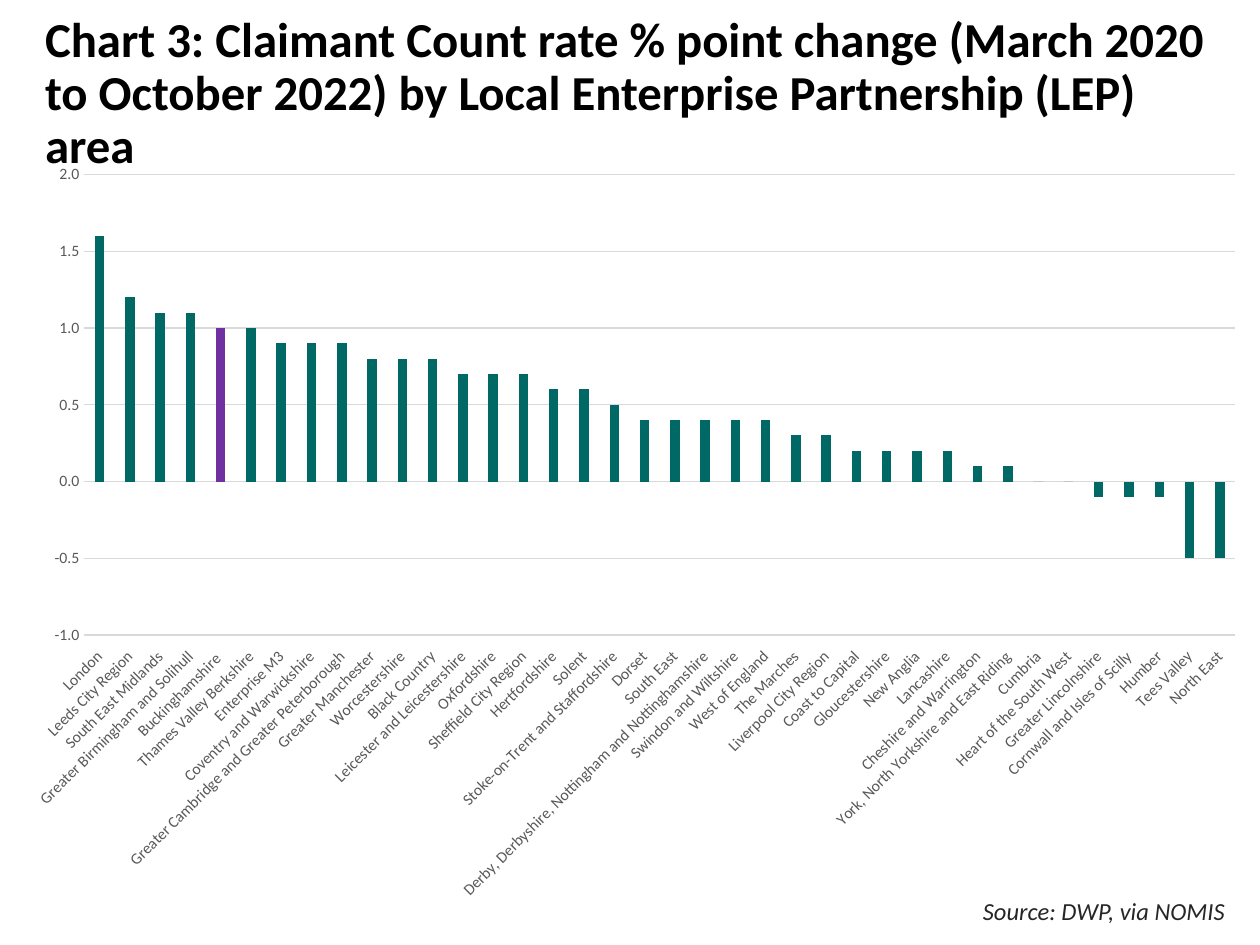
"""Build the Claimant Count slide with its column chart by LEP area."""
from dataclasses import dataclass, field

from pptx import Presentation
from pptx.chart.axis import _BaseAxis
from pptx.chart.data import CategoryChartData
from pptx.dml.color import RGBColor
from pptx.enum.chart import XL_CHART_TYPE, XL_TICK_LABEL_POSITION, XL_TICK_MARK
from pptx.enum.text import MSO_ANCHOR, PP_ALIGN
from pptx.slide import Slide
from pptx.text.text import Font
from pptx.util import Inches, Pt

COLUMNS = XL_CHART_TYPE.COLUMN_CLUSTERED
LOW = XL_TICK_LABEL_POSITION.LOW
NO_TICK = XL_TICK_MARK.NONE
TOP, MIDDLE = MSO_ANCHOR.TOP, MSO_ANCHOR.MIDDLE
LEFT, RIGHT = PP_ALIGN.LEFT, PP_ALIGN.RIGHT

BLACK = RGBColor(0x00, 0x00, 0x00)
CHARCOAL = RGBColor(0x26, 0x26, 0x26)
GREY = RGBColor(0x59, 0x59, 0x59)
PALE_GREY = RGBColor(0xD9, 0xD9, 0xD9)
TEAL = RGBColor(0x00, 0x69, 0x65)
PURPLE = RGBColor(0x70, 0x30, 0xA0)

FONT_NAME = "Calibri"
SLIDE_WIDTH, SLIDE_HEIGHT = Inches(10), Inches(7.5)
HIGHLIGHT = "Buckinghamshire "

RATE_CHANGES: dict[str, float] = {
    "London": 1.6,
    "Leeds City Region": 1.2,
    "South East Midlands": 1.1,
    "Greater Birmingham and Solihull": 1.1,
    HIGHLIGHT: 1.0,
    "Thames Valley Berkshire": 1.0,
    "Enterprise M3": 0.9,
    "Coventry and Warwickshire": 0.9,
    "Greater Cambridge and Greater Peterborough": 0.9,
    "Greater Manchester": 0.8,
    "Worcestershire": 0.8,
    "Black Country": 0.8,
    "Leicester and Leicestershire": 0.7,
    "Oxfordshire": 0.7,
    "Sheffield City Region": 0.7,
    "Hertfordshire": 0.6,
    "Solent": 0.6,
    "Stoke-on-Trent and Staffordshire": 0.5,
    "Dorset": 0.4,
    "South East": 0.4,
    "Derby, Derbyshire, Nottingham and Nottinghamshire": 0.4,
    "Swindon and Wiltshire": 0.4,
    "West of England": 0.4,
    "The Marches": 0.3,
    "Liverpool City Region": 0.3,
    "Coast to Capital": 0.2,
    "Gloucestershire": 0.2,
    "New Anglia": 0.2,
    "Lancashire": 0.2,
    "Cheshire and Warrington": 0.1,
    "York, North Yorkshire and East Riding": 0.1,
    "Cumbria": 0.0,
    "Heart of the South West": 0.0,
    "Greater Lincolnshire": -0.1,
    "Cornwall and Isles of Scilly": -0.1,
    "Humber": -0.1,
    "Tees Valley": -0.5,
    "North East": -0.5,
}


@dataclass(frozen=True)
class Area:
    """A rectangle given as percentages of the slide's width and height."""

    left: float
    top: float
    width: float
    height: float

    def lengths(self) -> tuple[int, int, int, int]:
        """Return the rectangle in slide units."""
        return (
            int(SLIDE_WIDTH * self.left / 100),
            int(SLIDE_HEIGHT * self.top / 100),
            int(SLIDE_WIDTH * self.width / 100),
            int(SLIDE_HEIGHT * self.height / 100),
        )


@dataclass(frozen=True)
class Label:
    """A text box with its formats."""

    text: str
    area: Area
    size: float
    color: RGBColor
    font: dict = field(default_factory=dict)
    frame: dict = field(default_factory=dict)
    para: dict = field(default_factory=dict)


LABELS = (
    Label(
        "Chart 3: Claimant Count rate % point change (March 2020 to October 2022) "
        "by Local Enterprise Partnership (LEP) area",
        Area(2.6, 6, 94.8, 13.6), 27.9, BLACK,
        font={"bold": True},
        frame={"vertical_anchor": MIDDLE, "margin_bottom": Inches(0.47)},
        para={"alignment": LEFT, "line_spacing": 0.9},
    ),
    Label(
        "Source: DWP, via NOMIS",
        Area(74.4, 94.13, 23.8, 4.53), 14, CHARCOAL,
        font={"italic": True},
        frame={"vertical_anchor": TOP},
        para={"alignment": RIGHT},
    ),
)
CHART_AREA = Area(0.9, 15.87, 99.1, 80.93)


def apply_formats(target: object, formats: dict) -> None:
    """Set each named attribute on the target."""
    for name, value in formats.items():
        setattr(target, name, value)


def style_font(font: Font, size: float, color: RGBColor, **formats: bool) -> None:
    """Set the typeface, size, colour and further formats of a font."""
    apply_formats(font, {"name": FONT_NAME, "size": Pt(size), **formats})
    font.color.rgb = color


def add_label(slide: Slide, label: Label) -> None:
    """Draw one text box."""
    frame = slide.shapes.add_textbox(*label.area.lengths()).text_frame
    apply_formats(frame, {"word_wrap": True, **label.frame})
    para = frame.paragraphs[0]
    apply_formats(para, label.para)
    span = para.add_run()
    span.text = label.text
    style_font(span.font, label.size, label.color, **label.font)


def style_axis(axis: _BaseAxis, formats: dict) -> None:
    """Set the tick marks, label font and further formats of an axis."""
    apply_formats(
        axis, {"major_tick_mark": NO_TICK, "minor_tick_mark": NO_TICK, **formats}
    )
    style_font(axis.tick_labels.font, 9, GREY)


def add_rate_chart(slide: Slide) -> None:
    """Draw the columns with the highlighted area in its own colour."""
    data = CategoryChartData(number_format="0.0")
    data.categories = list(RATE_CHANGES)
    data.add_series("Series 1", list(RATE_CHANGES.values()))
    chart = slide.shapes.add_chart(COLUMNS, *CHART_AREA.lengths(), data).chart
    apply_formats(chart, {"has_legend": False, "has_title": False})
    style_font(chart.font, 10, BLACK)

    plot = chart.plots[0]
    apply_formats(plot, {"gap_width": 219, "overlap": -27, "vary_by_categories": False})
    series = plot.series[0]
    series.invert_if_negative = False
    highlighted = series.points[list(RATE_CHANGES).index(HIGHLIGHT)]
    for item, color in ((series, TEAL), (highlighted, PURPLE)):
        item.format.fill.solid()
        item.format.fill.fore_color.rgb = color

    areas, rates = chart.category_axis, chart.value_axis
    style_axis(areas, {"tick_label_position": LOW, "has_major_gridlines": False})
    areas._element.txPr.bodyPr.set("rot", "-2700000")
    style_axis(rates, {"minimum_scale": -1, "maximum_scale": 2, "major_unit": 0.5})
    apply_formats(
        rates.tick_labels,
        {"number_format": "#,##0.0", "number_format_is_linked": False},
    )
    rates.format.line.fill.background()
    for line in (areas.format.line, rates.major_gridlines.format.line):
        line.color.rgb = PALE_GREY
        line.width = Pt(0.75)


def main() -> None:
    """Build and save the deck."""
    deck = Presentation()
    apply_formats(deck, {"slide_width": SLIDE_WIDTH, "slide_height": SLIDE_HEIGHT})
    page = deck.slides.add_slide(deck.slide_layouts[6])
    add_rate_chart(page)
    for label in LABELS:
        add_label(page, label)
    deck.save("out.pptx")


if __name__ == "__main__":
    main()
